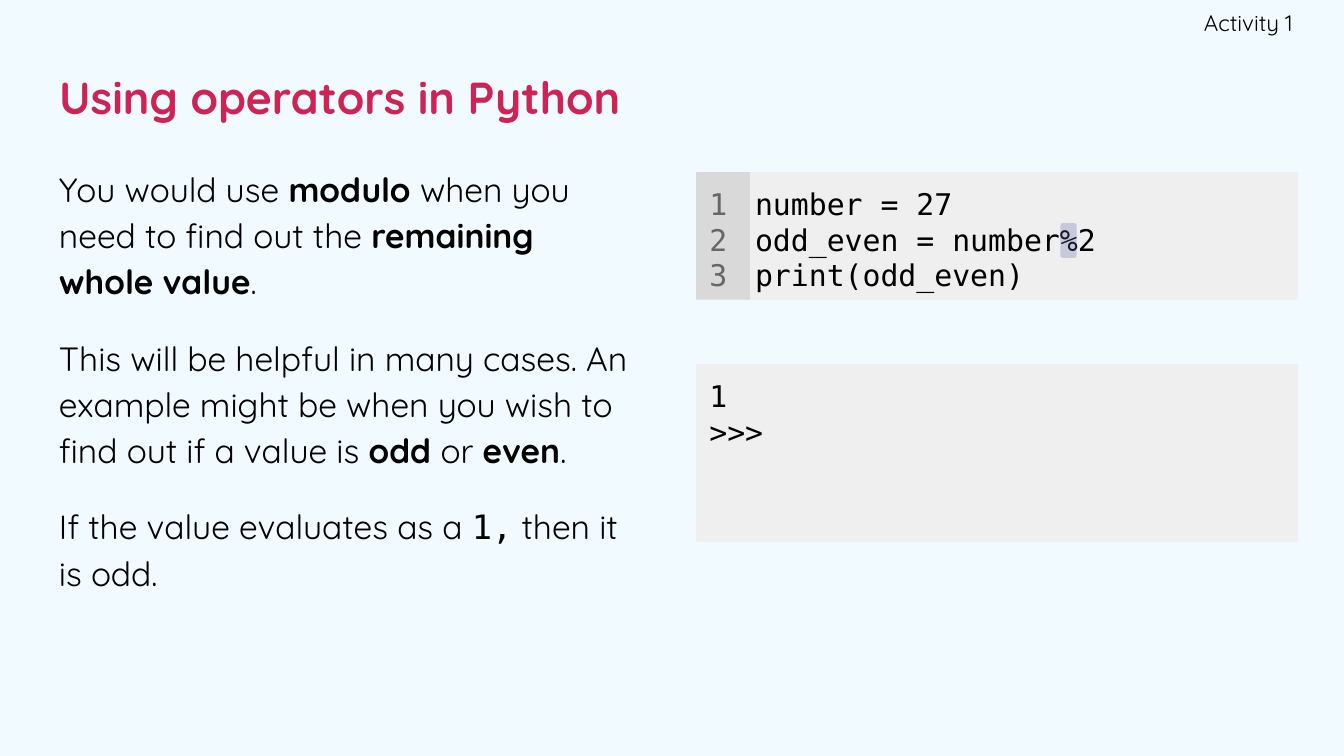
from dataclasses import dataclass

import pptx
import pptx.dml.color
import pptx.enum.shapes
import pptx.enum.text
import pptx.oxml
import pptx.oxml.ns
import pptx.util
from pptx.shapes.autoshape import Shape
from pptx.slide import Slide
from pptx.text.text import TextFrame
from pptx.util import Inches

ALIGN = pptx.enum.text.PP_ALIGN
ANCHOR = pptx.enum.text.MSO_ANCHOR
SHAPE = pptx.enum.shapes.MSO_SHAPE

SLIDE_WIDTH = 10
SLIDE_HEIGHT = SLIDE_WIDTH * 9 / 16


@dataclass(frozen=True)
class Theme:
    background: str = "F1FAFF"
    heading: str = "CD2355"
    ink: str = "000000"
    line_number: str = "666666"
    panel: str = "EFEFEF"
    gutter: str = "D9D9D9"
    highlight: str = "5B5BA5"
    highlight_alpha: int = 26
    prose_font: str = "Quicksand"
    code_font: str = "DejaVu Sans Mono"
    title_size: int = 24
    body_size: int = 18
    code_size: int = 16
    label_size: int = 12
    paragraph_gap: int = 16
    line_spacing: float = 1.15


THEME = Theme()


@dataclass(frozen=True)
class Box:
    left: float
    top: float
    width: float
    height: float

    def lengths(self) -> tuple:
        return tuple(map(Inches, (self.left, self.top, self.width, self.height)))


@dataclass(frozen=True)
class Span:
    text: str
    bold: bool = False
    font: str = THEME.prose_font


@dataclass(frozen=True)
class CodePanel:
    box: Box
    lines: tuple[str, ...]
    fill: str = THEME.panel
    color: str = THEME.ink


BODY = (
    (
        Span("You would use "),
        Span("modulo ", bold=True),
        Span("when you need to find out the "),
        Span("remaining whole value", bold=True),
        Span("."),
    ),
    (
        Span("This will be helpful in many cases. An example might be "
             "when you wish to find out if a value is "),
        Span("odd ", bold=True),
        Span("or "),
        Span("even", bold=True),
        Span("."),
    ),
    (
        Span("If the value evaluates as a "),
        Span("1,", font=THEME.code_font),
        Span(" then it is odd."),
    ),
)

CODE = ("number = 27", "odd_even = number%2", "print(odd_even)")
PANELS = (
    CodePanel(Box(5.52, 1.28, 4.14, 0.95), CODE),
    CodePanel(Box(5.18, 1.28, 0.4, 0.95),
              tuple(str(n) for n in range(1, len(CODE) + 1)),
              THEME.gutter, THEME.line_number),
    CodePanel(Box(5.18, 2.71, 4.48, 1.32), ("1", ">>>")),
)


def rgb(color: str) -> pptx.dml.color.RGBColor:
    return pptx.dml.color.RGBColor.from_string(color)


def set_frame(frame: TextFrame, anchor: ANCHOR = ANCHOR.TOP, right: float = 0.1) -> None:
    frame.word_wrap = True
    frame.auto_size = pptx.enum.text.MSO_AUTO_SIZE.NONE
    frame.vertical_anchor = anchor
    frame.margin_left = frame.margin_top = frame.margin_bottom = Inches(0.1)
    frame.margin_right = Inches(right)


def write(frame: TextFrame, paragraphs: tuple[tuple[Span, ...], ...], size: int,
          color: str = THEME.ink, align: ALIGN = ALIGN.LEFT) -> None:
    for index, spans in enumerate(paragraphs):
        paragraph = frame.add_paragraph() if index else frame.paragraphs[0]
        paragraph.alignment = align
        for span in spans:
            run = paragraph.add_run()
            run.text = span.text
            run.font.name = span.font
            run.font.size = pptx.util.Pt(size)
            run.font.bold = span.bold
            run.font.color.rgb = rgb(color)


def add_title(slide: Slide, box: Box, text: str) -> None:
    title = slide.shapes.title
    title.left, title.top, title.width, title.height = box.lengths()
    set_frame(title.text_frame, ANCHOR.MIDDLE)
    write(title.text_frame, ((Span(text, bold=True),),), THEME.title_size, THEME.heading)


def add_body(slide: Slide, box: Box) -> None:
    frame = slide.shapes.add_textbox(*box.lengths()).text_frame
    set_frame(frame)
    write(frame, BODY, THEME.body_size)
    for index, paragraph in enumerate(frame.paragraphs):
        paragraph.line_spacing = THEME.line_spacing
        paragraph.space_before = pptx.util.Pt(THEME.paragraph_gap if index else 0)


def add_activity_label(slide: Slide, box: Box, text: str) -> None:
    frame = slide.shapes.add_textbox(*box.lengths()).text_frame
    set_frame(frame, ANCHOR.MIDDLE, right=0)
    write(frame, ((Span(text),),), THEME.label_size, align=ALIGN.RIGHT)


def add_block(slide: Slide, kind: SHAPE, box: Box, fill: str) -> Shape:
    block = slide.shapes.add_shape(kind, *box.lengths())
    block.shadow.inherit = False
    block.fill.solid()
    block.fill.fore_color.rgb = rgb(fill)
    block.line.fill.background()
    return block


def add_code_panel(slide: Slide, panel: CodePanel) -> None:
    frame = add_block(slide, SHAPE.RECTANGLE, panel.box, panel.fill).text_frame
    set_frame(frame)
    lines = tuple((Span(line, font=THEME.code_font),) for line in panel.lines)
    write(frame, lines, THEME.code_size, panel.color)


def add_operator_highlight(slide: Slide, box: Box) -> None:
    """Lay a translucent marker over the modulo operator."""
    marker = add_block(slide, SHAPE.ROUNDED_RECTANGLE, box, THEME.highlight)
    marker.adjustments[0] = 0.17
    color = marker.fill._xPr.find(".//" + pptx.oxml.ns.qn("a:srgbClr"))
    alpha = pptx.oxml.parse_xml(
        f'<a:alpha {pptx.oxml.ns.nsdecls("a")} val="{THEME.highlight_alpha * 1000}"/>')
    color.append(alpha)


def main() -> None:
    deck = pptx.Presentation()
    deck.slide_width, deck.slide_height = Inches(SLIDE_WIDTH), Inches(SLIDE_HEIGHT)
    slide = deck.slides.add_slide(deck.slide_layouts.get_by_name("Title Only"))
    slide.background.fill.solid()
    slide.background.fill.fore_color.rgb = rgb(THEME.background)

    add_title(slide, Box(0.34, 0.34, 9.32, 0.76), "Using operators in Python")
    add_body(slide, Box(0.34, 1.11, 4.48, 4))
    add_activity_label(slide, Box(7.48, 0, 2.14, 0.34), "Activity 1")
    for panel in PANELS:
        add_code_panel(slide, panel)
    add_operator_highlight(slide, Box(7.89, 1.66, 0.12, 0.26))

    deck.save("out.pptx")


if __name__ == "__main__":
    main()
